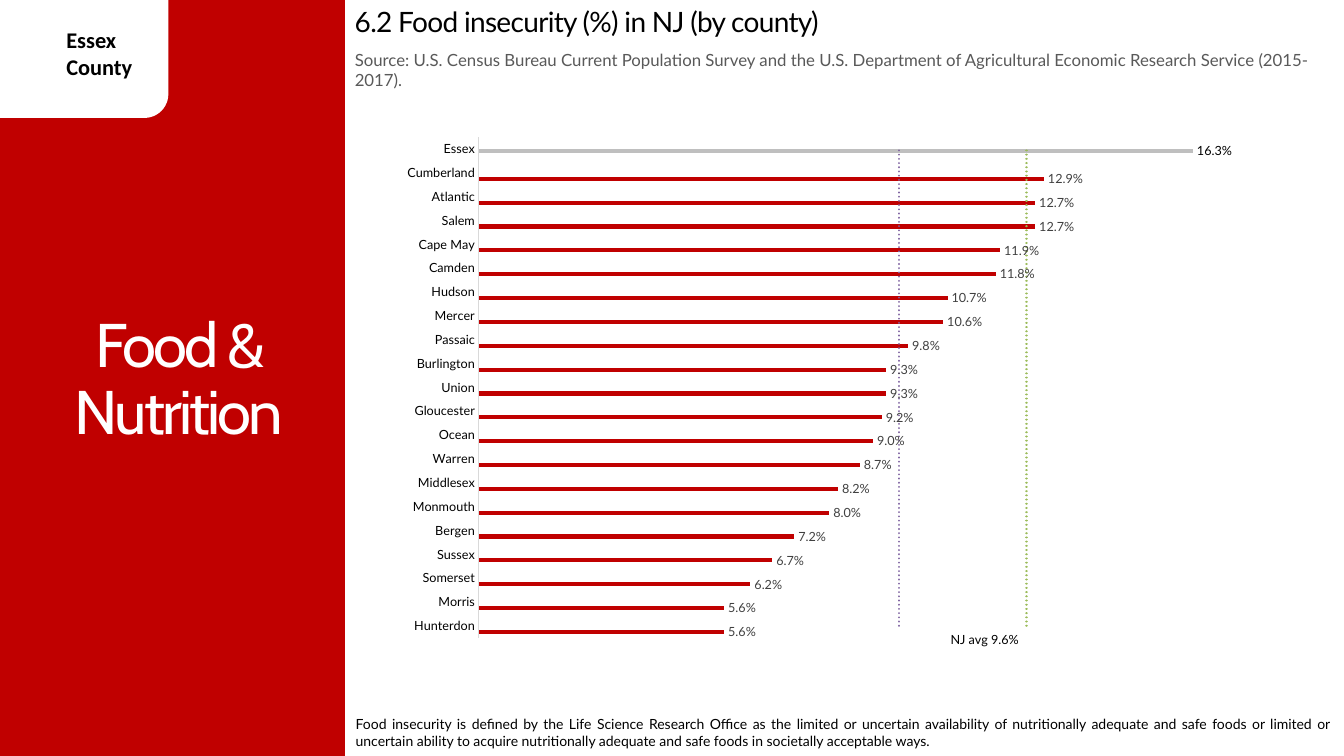
from dataclasses import dataclass
from typing import Optional

import lxml.etree
import pptx
import pptx.chart.data
import pptx.dml.color
import pptx.enum.chart
import pptx.enum.shapes
import pptx.enum.text
import pptx.oxml
import pptx.oxml.ns
import pptx.util

Inches = pptx.util.Inches
Align = pptx.enum.text.PP_ALIGN
Anchor = pptx.enum.text.MSO_ANCHOR
ShapeKind = pptx.enum.shapes.MSO_SHAPE


@dataclass(frozen=True)
class Theme:
    red: str = "C00000"
    white: str = "FFFFFF"
    black: str = "000000"
    gray: str = "595959"
    label_gray: str = "404040"
    bar_gray: str = "BFBFBF"
    axis_gray: str = "D9D9D9"
    green: str = "9BBB59"
    purple: str = "8064A2"
    body_font: str = "Lato"
    title_font: str = "Cabin"
    county_font: str = "Calibri"
    title_size: float = 44
    heading_size: float = 20
    county_size: float = 16
    source_size: float = 12
    note_size: float = 10
    chart_size: float = 9


THEME = Theme()


@dataclass(frozen=True)
class Panel:
    kind: pptx.enum.shapes.MSO_SHAPE
    place: tuple[float, float, float, float]
    color: str


@dataclass(frozen=True)
class Label:
    text: str
    place: tuple[float, float, float, float]
    size: float
    font: str = THEME.body_font
    color: str = THEME.black
    bold: bool = False
    align: Align = Align.LEFT
    anchor: Anchor = Anchor.TOP
    spacing: float = 0
    line_spacing: Optional[float] = None


@dataclass(frozen=True)
class BarSeries:
    name: str
    values: list[Optional[float]]
    color: str
    label_color: Optional[str] = None
    trend_color: Optional[str] = None


PANELS = [
    Panel(ShapeKind.RECTANGLE, (0, 0, 3.42, 7.5), THEME.red),
    Panel(ShapeKind.ROUNDED_RECTANGLE, (-0.33, -0.25, 2, 1.42), THEME.white),
]
TITLE = Label("Food & Nutrition", (0, 0.78, 3.55, 6), THEME.title_size, THEME.title_font,
              THEME.white, align=Align.CENTER, anchor=Anchor.MIDDLE, spacing=-2,
              line_spacing=0.9)
LABELS = [
    Label("Essex County", (0.56, 0.21, 1.11, 0.64), THEME.county_size,
          THEME.county_font, bold=True),
    Label("6.2 Food insecurity (%) in NJ (by county)", (3.42, 0, 9.86, 0.44),
          THEME.heading_size, spacing=-0.5),
    Label("Source: U.S. Census Bureau Current Population Survey and the U.S. Department of "
          "Agricultural Economic Research Service (2015-2017).", (3.42, 0.44, 9.75, 0.5),
          THEME.source_size, color=THEME.gray),
    Label("Food insecurity is defined by the Life Science Research Office as the limited or "
          "uncertain availability of nutritionally adequate and safe foods or limited or "
          "uncertain ability to acquire nutritionally adequate and safe foods in societally "
          "acceptable ways.", (3.43, 7.05, 9.86, 0.44), THEME.note_size,
          align=Align.JUSTIFY, anchor=Anchor.MIDDLE),
]
AVERAGE_LABEL = Label("NJ avg 9.6%", (9.33, 6.22, 1, 0.25), THEME.chart_size,
                      anchor=Anchor.MIDDLE)

COUNTIES = {
    "Hunterdon": 0.056, "Morris": 0.056, "Somerset": 0.062, "Sussex": 0.067,
    "Bergen": 0.072, "Monmouth": 0.08, "Middlesex": 0.082, "Warren": 0.087,
    "Ocean": 0.09, "Gloucester": 0.092, "Union": 0.093, "Burlington": 0.093,
    "Passaic": 0.098, "Mercer": 0.106, "Hudson": 0.107, "Camden": 0.118,
    "Cape May": 0.119, "Salem": 0.127, "Atlantic": 0.127, "Cumberland": 0.129,
    "Essex": 0.163,
}
SERIES = [
    BarSeries("2017", [None if name == "Essex" else rate for name, rate in COUNTIES.items()],
              THEME.red, label_color=THEME.label_gray),
    BarSeries("County", [rate if name == "Essex" else None for name, rate in COUNTIES.items()],
              THEME.bar_gray, label_color=THEME.black),
    BarSeries("Series 3", [0.125] * len(COUNTIES), THEME.white, trend_color=THEME.green),
    BarSeries("Series 4", [0.096] * len(COUNTIES), THEME.white, trend_color=THEME.purple),
]
CHART_PLACE = (3.86, 1.25, 8.89, 5.46)
PLOT_LAYOUT = {"x": 0.1, "y": 0.02, "w": 0.88, "h": 0.91}


def rgb(color: str) -> pptx.dml.color.RGBColor:
    return pptx.dml.color.RGBColor.from_string(color)


def style_font(font, size: float, color: str, name: str, bold: bool = False) -> None:
    font.size = pptx.util.Pt(size)
    font.name = name
    font.bold = bold
    font.color.rgb = rgb(color)


def add_panel(page, panel: Panel) -> None:
    shape = page.shapes.add_shape(panel.kind, *map(Inches, panel.place))
    shape.shadow.inherit = False
    shape.fill.solid()
    shape.fill.fore_color.rgb = rgb(panel.color)
    shape.line.fill.background()


def write_label(box, label: Label) -> None:
    box.left, box.top, box.width, box.height = map(Inches, label.place)
    frame = box.text_frame
    frame.text = label.text
    frame.word_wrap = True
    frame.auto_size = pptx.enum.text.MSO_AUTO_SIZE.NONE
    frame.vertical_anchor = label.anchor
    para = frame.paragraphs[0]
    para.alignment = label.align
    if label.line_spacing:
        para.line_spacing = label.line_spacing
    for span in para.runs:
        style_font(span.font, label.size, label.color, label.font, label.bold)
        if label.spacing:
            span.font._element.set("spc", str(round(label.spacing * 100)))


def add_label(page, label: Label) -> None:
    write_label(page.shapes.add_textbox(*map(Inches, label.place)), label)


def add_trend(series, color: str) -> None:
    trend = pptx.oxml.parse_xml(
        f'<c:trendline {pptx.oxml.ns.nsdecls("c", "a")}><c:spPr><a:ln w="19050" cap="rnd">'
        f'<a:solidFill><a:srgbClr val="{color}"/></a:solidFill><a:prstDash val="sysDot"/>'
        '</a:ln></c:spPr><c:trendlineType val="linear"/><c:dispRSqr val="0"/>'
        '<c:dispEq val="0"/></c:trendline>')
    series._element.find(pptx.oxml.ns.qn("c:cat")).addprevious(trend)


def set_plot_layout(chart) -> None:
    qn = pptx.oxml.ns.qn
    area = chart._chartSpace.find(f".//{qn('c:plotArea')}")
    for old in area.findall(qn("c:layout")):
        area.remove(old)
    layout = lxml.etree.Element(qn("c:layout"))
    manual = lxml.etree.SubElement(layout, qn("c:manualLayout"))
    settings = {"layoutTarget": "inner", "xMode": "edge", "yMode": "edge", **PLOT_LAYOUT}
    for name, value in settings.items():
        lxml.etree.SubElement(manual, qn(f"c:{name}")).set("val", str(value))
    area.insert(0, layout)


def style_series(series, bars: BarSeries) -> None:
    series.invert_if_negative = False
    series.format.fill.solid()
    series.format.fill.fore_color.rgb = rgb(bars.color)
    if bars.label_color:
        labels = series.data_labels
        labels.show_value = True
        labels.number_format = "0.0%"
        labels.number_format_is_linked = False
        labels.position = pptx.enum.chart.XL_LABEL_POSITION.OUTSIDE_END
        style_font(labels.font, THEME.chart_size, bars.label_color, THEME.body_font)
    if bars.trend_color:
        add_trend(series, bars.trend_color)


def add_county_chart(page) -> None:
    data = pptx.chart.data.CategoryChartData(number_format="0.0%")
    data.categories = list(COUNTIES)
    for bars in SERIES:
        data.add_series(bars.name, bars.values)
    chart = page.shapes.add_chart(pptx.enum.chart.XL_CHART_TYPE.BAR_CLUSTERED,
                                  *map(Inches, CHART_PLACE), data).chart
    chart.has_legend = False
    chart.has_title = False
    style_font(chart.font, THEME.chart_size, THEME.black, THEME.body_font)
    plot = chart.plots[0]
    plot.gap_width = 182
    plot.overlap = 0
    plot.vary_by_categories = False
    for series, bars in zip(plot.series, SERIES):
        style_series(series, bars)
    counties = chart.category_axis
    counties.major_tick_mark = pptx.enum.chart.XL_TICK_MARK.NONE
    counties.format.line.color.rgb = rgb(THEME.axis_gray)
    counties.format.line.width = pptx.util.Pt(0.75)
    style_font(counties.tick_labels.font, THEME.chart_size, THEME.black, THEME.body_font)
    rates = chart.value_axis
    rates.minimum_scale, rates.maximum_scale = 0, 0.18
    rates.has_major_gridlines = False
    rates.visible = False
    set_plot_layout(chart)


def main() -> None:
    deck = pptx.Presentation()
    deck.slide_width, deck.slide_height = Inches(13.33), Inches(7.5)
    page = deck.slides.add_slide(deck.slide_layouts.get_by_name("Title Only"))
    title = page.shapes.title
    for panel in PANELS:
        add_panel(page, panel)
    page.shapes._spTree.append(title._element)
    write_label(title, TITLE)
    for label in LABELS:
        add_label(page, label)
    add_county_chart(page)
    add_label(page, AVERAGE_LABEL)
    deck.save("out.pptx")


if __name__ == "__main__":
    main()
